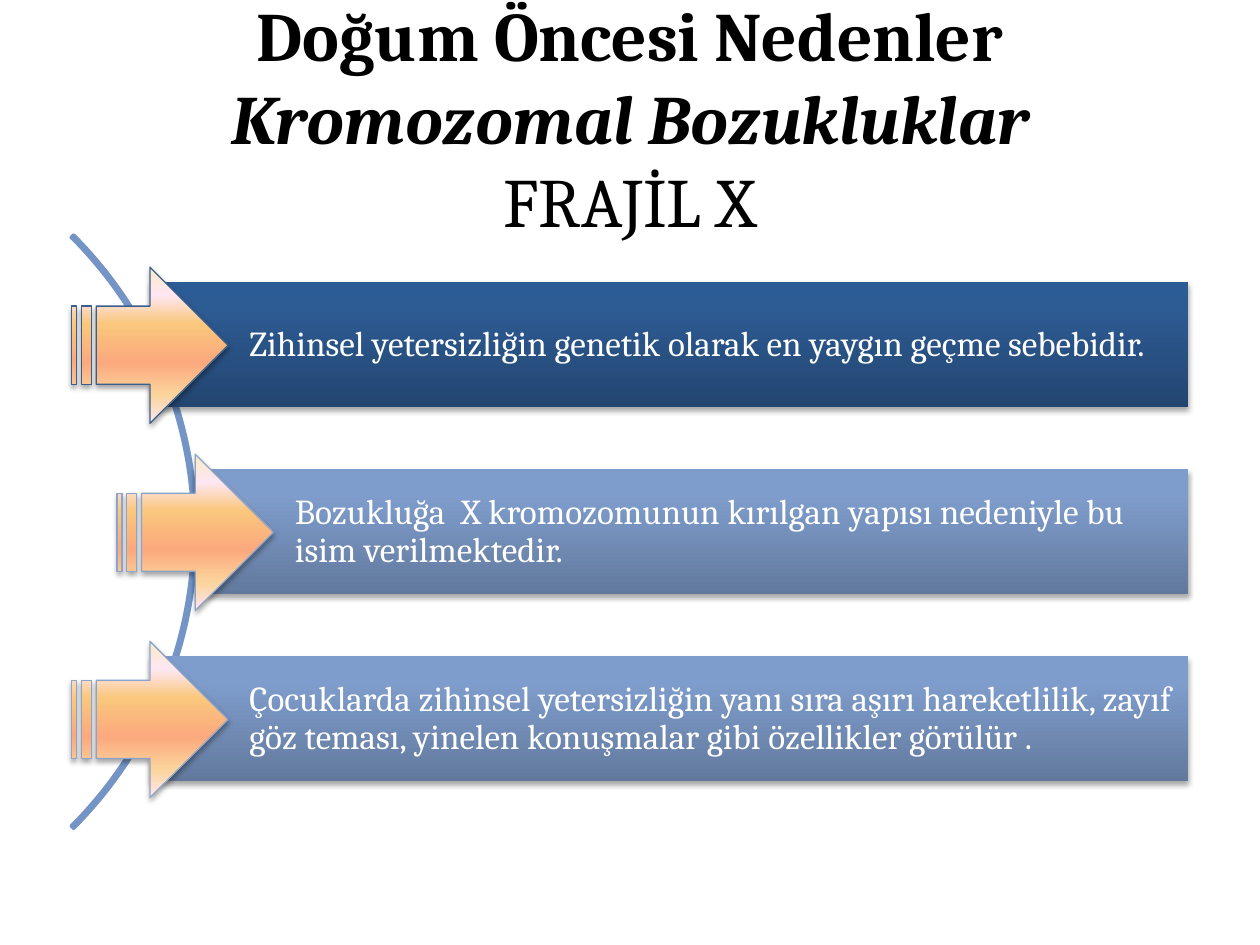
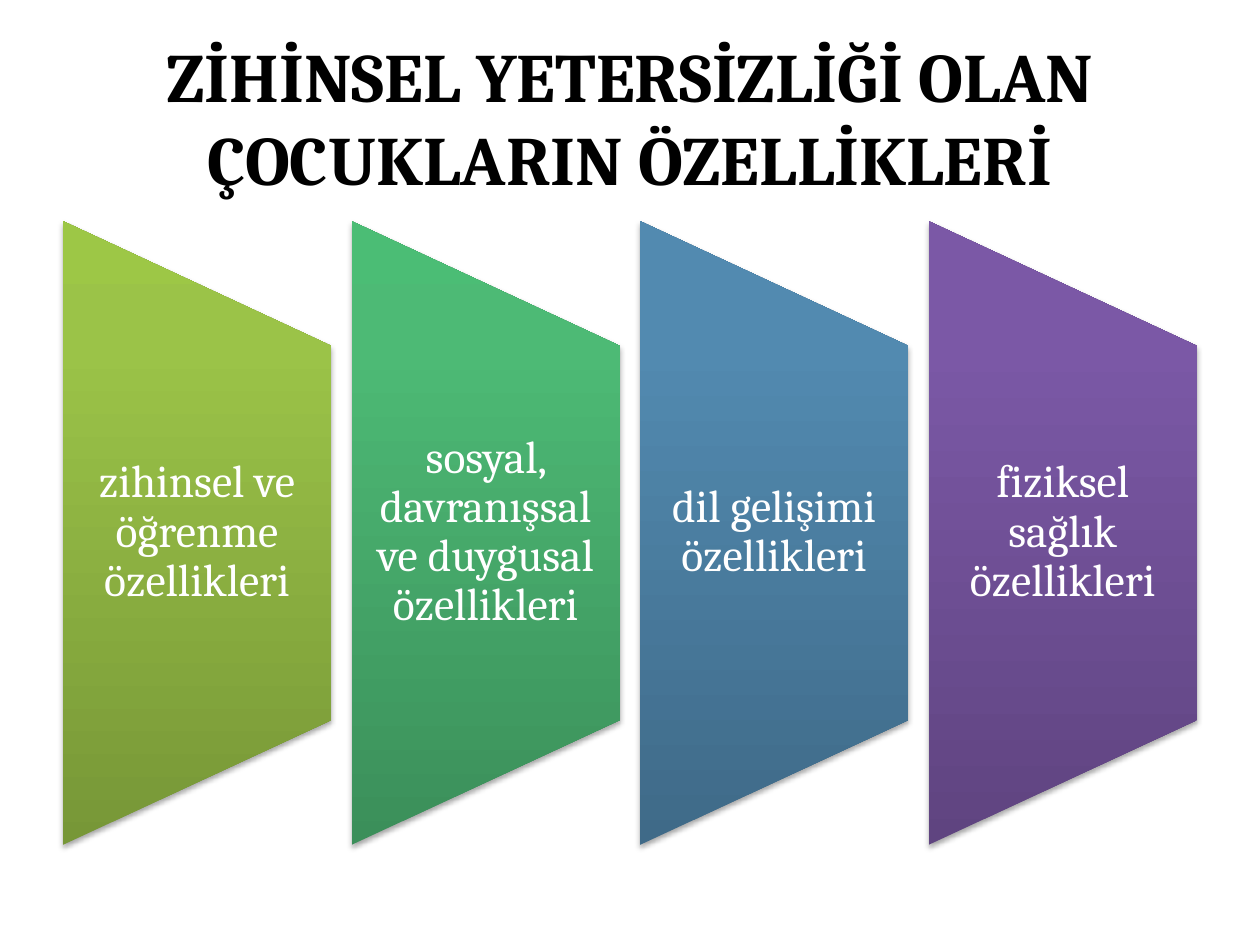
from dataclasses import dataclass

from lxml import etree
from pptx import Presentation
from pptx.dml.color import RGBColor
from pptx.enum import shapes, text
from pptx.oxml.ns import qn
from pptx.util import Inches, Pt


@dataclass(frozen=True)
class Theme:
    font: str = "Cambria"
    title_size: float = 39.6
    bar_size: float = 20
    panel_size: float = 26
    title_color: str = "000000"
    light_text: str = "FFFFFF"
    curve: str = "7394C5"
    # Gradient stops: (percent, colour)
    navy: tuple = ((0, "234671"), (80, "2D5B93"), (100, "2B5C96"))
    steel: tuple = ((0, "62799D"), (80, "7F9DCC"), (100, "7E9DCE"))
    green: tuple = ((0, "779737"), (80, "9BC348"), (100, "9DC746"))
    emerald: tuple = ((0, "3B8F5A"), (80, "4DBA75"), (100, "4BBD75"))
    blue: tuple = ((0, "3F6A88"), (80, "528AB0"), (100, "518BB3"))
    purple: tuple = ((0, "5F4480"), (80, "7B58A6"), (100, "7C57A8"))
    peach: tuple = ((0, "FBEAC7"), (18, "FEE7F2"), (36, "FAC77D"),
                    (61, "FBA97D"), (82, "FBD49C"), (100, "FEE7F2"))
    navy_edge: str = "3A5F8C"
    steel_edge: str = "8CA4C9"


THEME = Theme()
SHAPE = shapes.MSO_SHAPE
ALIGN = text.PP_ALIGN
UPWARD, DOWNWARD = 90, 270  # counter-clockwise gradient angles


# Styling
def sub(parent, tag, **attributes):
    return etree.SubElement(parent, qn(tag), attributes)


def apply_gradient(shape, stops, angle):
    shape.fill.gradient()
    shape.fill.gradient_angle = angle
    gradient = shape._element.spPr.find(qn("a:gradFill"))
    gradient.set("rotWithShape", "0")
    stop_list = gradient.find(qn("a:gsLst"))
    for stop in list(stop_list):
        stop_list.remove(stop)
    for percent, color in stops:
        stop = sub(stop_list, "a:gs", pos=str(percent * 1000))
        sub(stop, "a:srgbClr", val=color)


def apply_shadow(shape):
    effects = shape._element.spPr.find(qn("a:effectLst"))
    shadow = sub(effects, "a:outerShdw", blurRad=str(Pt(3.1)),
                 dist=str(Pt(1.8)), dir="5400000", rotWithShape="0")
    color = sub(shadow, "a:srgbClr", val="000000")
    sub(color, "a:alpha", val="35000")


def add_figure(slide, preset, box, edge=None, edge_width=0.75):
    figure = slide.shapes.add_shape(preset, *map(Inches, box))
    if edge:
        figure.line.color.rgb = RGBColor.from_string(edge)
        figure.line.width = Pt(edge_width)
    else:
        figure.line.fill.background()
    figure.shadow.inherit = False
    return figure


def add_glossy(slide, preset, box, stops, angle=UPWARD, edge=None):
    figure = add_figure(slide, preset, box, edge)
    apply_gradient(figure, stops, angle)
    apply_shadow(figure)
    return figure


# Text
def set_frame(frame, insets, align, spacing=None):
    frame.word_wrap = True
    frame.vertical_anchor = text.MSO_ANCHOR.MIDDLE
    (frame.margin_left, frame.margin_top,
     frame.margin_right, frame.margin_bottom) = map(Inches, insets)
    paragraph = frame.paragraphs[0]
    paragraph.alignment = align
    if spacing:
        paragraph.line_spacing = spacing
    return paragraph


def add_run(paragraph, words, size, color, bold=False, italic=False):
    run = paragraph.add_run()
    run.text = words
    run.font.name = THEME.font
    run.font.size = Pt(size)
    run.font.color.rgb = RGBColor.from_string(color)
    run.font.bold = bold
    run.font.italic = italic


def add_title(slide, lines):
    title = slide.shapes.add_textbox(*map(Inches, (0.5, 0.3, 9, 1.25)))
    paragraph = set_frame(title.text_frame, (0.1, 0.05, 0.1, 0.05), ALIGN.CENTER)
    for index, (words, bold, italic) in enumerate(lines):
        if index:
            paragraph.add_line_break()
        add_run(paragraph, words, THEME.title_size, THEME.title_color, bold, italic)


# Content elements
def add_curve(slide):
    curve = add_figure(slide, SHAPE.BLOCK_ARC, (-5.1, 0.89, 6.66, 6.66), THEME.curve, 2)
    curve.fill.background()
    for index, value in enumerate((189, 27, 0.004)):
        curve.adjustments[index] = value


def add_arrow_bar(slide, left, top, words, stops, edge):
    right = 9.43
    bar = add_glossy(slide, SHAPE.RECTANGLE, (left, top, right - left, 0.99), stops)
    paragraph = set_frame(bar.text_frame, (0.79, 0.06, 0.06, 0.06), ALIGN.LEFT, 0.9)
    add_run(paragraph, words, THEME.bar_size, THEME.light_text)
    add_glossy(slide, SHAPE.STRIPED_RIGHT_ARROW, (left - 0.62, top - 0.12, 1.24, 1.24),
               THEME.peach, DOWNWARD, edge)


def add_panel(slide, left, words, stops):
    width, height, center = 2.13, 4.95, 4.23
    # The panel lies on its side, so its box is turned about the same centre
    box = (left + (width - height) / 2, center - width / 2, height, width)
    add_glossy(slide, SHAPE.FLOWCHART_MANUAL_OPERATION, box, stops).rotation = 270
    label = slide.shapes.add_textbox(*map(Inches, (left, 2.74, width, 2.97)))
    paragraph = set_frame(label.text_frame, (0.18, 0, 0.18, 0), ALIGN.CENTER, 0.9)
    add_run(paragraph, words, THEME.panel_size, THEME.light_text)


# Slides
def build_fragile_x(slide):
    add_title(slide, [("Doğum Öncesi Nedenler", True, False),
                      ("Kromozomal Bozukluklar", True, True),
                      ("FRAJİL X", False, False)])
    add_curve(slide)
    facts = [
        (1.19, "Zihinsel yetersizliğin genetik olarak en yaygın geçme sebebidir.",
         THEME.navy, THEME.navy_edge),
        (1.55, "Bozukluğa  X kromozomunun kırılgan yapısı nedeniyle bu isim "
               "verilmektedir.", THEME.steel, THEME.steel_edge),
        (1.19, "Çocuklarda zihinsel yetersizliğin yanı sıra aşırı hareketlilik, "
               "zayıf göz teması, yinelen konuşmalar gibi özellikler görülür .",
         THEME.steel, THEME.steel_edge),
    ]
    for row, (left, words, stops, edge) in enumerate(facts):
        add_arrow_bar(slide, left, 2.24 + row * 1.485, words, stops, edge)


def build_traits(slide):
    add_title(slide, [("ZİHİNSEL YETERSİZLİĞİ OLAN ÇOCUKLARIN ÖZELLİKLERİ", True, False)])
    traits = [
        ("zihinsel ve öğrenme özellikleri", THEME.green),
        ("sosyal, davranışsal ve duygusal özellikleri", THEME.emerald),
        ("dil gelişimi özellikleri", THEME.blue),
        ("fiziksel sağlık özellikleri", THEME.purple),
    ]
    for column, (words, stops) in enumerate(traits):
        add_panel(slide, 0.5 + column * 2.29, words, stops)


def main():
    deck = Presentation()
    deck.slide_width, deck.slide_height = Inches(10), Inches(7.5)
    blank = deck.slide_layouts[6]
    for build in (build_fragile_x, build_traits):
        build(deck.slides.add_slide(blank))
    deck.save("out.pptx")


if __name__ == "__main__":
    main()
